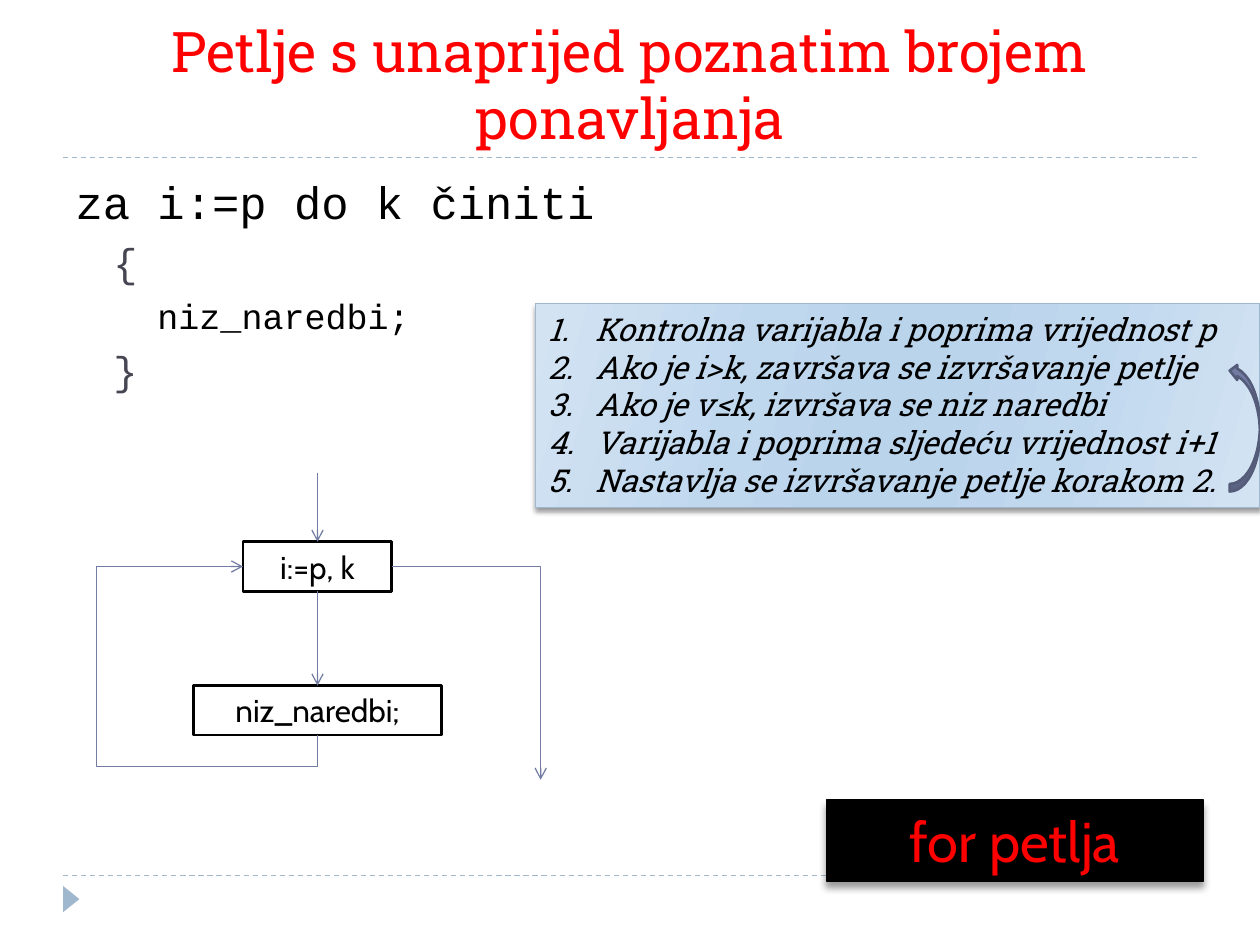
from lxml import etree
from pptx import Presentation
from pptx.dml.color import RGBColor
from pptx.enum.dml import MSO_LINE
from pptx.enum.shapes import MSO_CONNECTOR, MSO_SHAPE
from pptx.enum.text import MSO_ANCHOR, PP_ALIGN
from pptx.oxml.ns import qn
from pptx.util import Cm, Pt

STRAIGHT, ELBOW = MSO_CONNECTOR.STRAIGHT, MSO_CONNECTOR.ELBOW
RECT, TRIANGLE = MSO_SHAPE.RECTANGLE, MSO_SHAPE.ISOSCELES_TRIANGLE
CURVED_ARROW = MSO_SHAPE.CURVED_LEFT_ARROW
LEFT, CENTER = PP_ALIGN.LEFT, PP_ALIGN.CENTER
MIDDLE, BOTTOM, TOP = MSO_ANCHOR.MIDDLE, MSO_ANCHOR.BOTTOM, MSO_ANCHOR.TOP
DASH = MSO_LINE.DASH

BLACK = RGBColor(0x00, 0x00, 0x00)
WHITE = RGBColor(0xFF, 0xFF, 0xFF)
RED = RGBColor(0xFF, 0x00, 0x00)
GREY = RGBColor(0x46, 0x46, 0x53)
PALE = RGBColor(0x9F, 0xB8, 0xCD)
SLATE = RGBColor(0x72, 0x7C, 0xA3)
DARK_SLATE = RGBColor(0x54, 0x5C, 0x79)
GRADIENT = [(0, "D3E3F2"), (30, "C0D8EE"), (45, "BAD4EC"),
            (55, "BAD4EC"), (73, "C0D8EE"), (100, "D3E3F2")]


def add_text(p, text, font, size, color, align=LEFT):
    p.alignment = align
    r = p.add_run()
    r.text = text
    r.font.name, r.font.size, r.font.color.rgb = font, Pt(size), color
    return r


def style_line(cxn, color, dash=None):
    """Plain thin line; without a dash it ends in an open arrowhead."""
    cxn.line.color.rgb, cxn.line.width = color, Pt(0.75)
    if dash:
        cxn.line.dash_style = dash
    else:
        etree.SubElement(cxn.line._get_or_add_ln(), qn("a:tailEnd"), type="arrow")
    etree.SubElement(cxn._element.spPr, qn("a:effectLst"))


prs = Presentation()
prs.slide_width, prs.slide_height = Cm(25.4), Cm(19.05)
s = prs.slides.add_slide(prs.slide_layouts[1])

# Rules and corner mark
for y in (3.18, 17.65):
    rule = s.shapes.add_connector(STRAIGHT, Cm(1.27), Cm(y), Cm(24.13), Cm(y))
    style_line(rule, PALE, DASH)
mark = s.shapes.add_shape(TRIANGLE, Cm(1.17), Cm(17.96), Cm(0.53), Cm(0.33))
mark.rotation = 90
mark.shadow.inherit = False
mark.fill.solid()
mark.fill.fore_color.rgb = PALE
mark.line.fill.background()

# Title
title = s.shapes.title
title.left, title.top, title.width, title.height = Cm(1.27), Cm(0.43), Cm(22.86), Cm(2.74)
tf = title.text_frame
tf.vertical_anchor = BOTTOM
add_text(tf.paragraphs[0], "Petlje s unaprijed poznatim brojem ponavljanja",
         "Roboto Slab", 32, RED, CENTER)

# Pseudocode
body = s.placeholders[1]
body.left, body.top, body.width, body.height = Cm(1.27), Cm(3.38), Cm(16.84), Cm(5.33)
tf = body.text_frame
tf.vertical_anchor = TOP
CODE = [("za i:=p do k činiti", 0, 0, 6, 26, BLACK),
        ("{", 1, 0.76, 5, 23, GREY),
        ("niz_naredbi;", 2, 1.65, 5, 20, BLACK),
        ("}", 1, 0.76, 5, 23, GREY)]
for i, (text, level, indent, before, size, color) in enumerate(CODE):
    p = tf.add_paragraph() if i else tf.paragraphs[0]
    p.level, p.space_before = level, Pt(before)
    add_text(p, text, "Courier New", size, color)
    pPr = p._p.get_or_add_pPr()
    pPr.set("marL", str(Cm(indent)))
    pPr.set("indent", "0")
    etree.SubElement(pPr, qn("a:buNone"))

# Flowchart boxes, centred on one axis
AXIS = 6.4
boxes = []
for text, top, width in (("i:=p, k", 10.92, 3), ("niz_naredbi;", 13.82, 5)):
    sp = s.shapes.add_shape(RECT, Cm(AXIS - width / 2), Cm(top), Cm(width), Cm(1))
    sp.shadow.inherit = False
    sp.fill.solid()
    sp.fill.fore_color.rgb = WHITE
    sp.line.color.rgb, sp.line.width = BLACK, Pt(1.5)
    sp.text_frame.vertical_anchor = MIDDLE
    add_text(sp.text_frame.paragraphs[0], text, "Cabin", 18, BLACK, CENTER)
    boxes.append(sp)
header, statements = boxes

# Flowchart arrows
entry = s.shapes.add_connector(STRAIGHT, Cm(AXIS), Cm(9.53), Cm(AXIS), Cm(10.92))
entry.end_connect(header, 0)
step = s.shapes.add_connector(STRAIGHT, Cm(AXIS), Cm(11.92), Cm(AXIS), Cm(13.82))
step.begin_connect(header, 2)
step.end_connect(statements, 0)
leave = s.shapes.add_connector(ELBOW, Cm(7.9), Cm(11.42), Cm(10.9), Cm(15.72))
leave.begin_connect(header, 3)
back = s.shapes.add_connector(ELBOW, Cm(AXIS), Cm(14.82), Cm(4.9), Cm(11.42))
back.begin_connect(statements, 2)
back.end_connect(header, 1)
for cxn in (entry, step, leave, back):
    style_line(cxn, SLATE)

leave._element.spPr.find(qn("a:prstGeom")).set("prst", "bentConnector2")

# The way back leaves downwards, so its frame is turned a quarter
back.left, back.top, back.width, back.height = Cm(3.95), Cm(12.37), Cm(3.4), Cm(1.5)
xfrm = back._element.spPr.find(qn("a:xfrm"))
for flag, value in (("rot", "5400000"), ("flipH", "1"), ("flipV", "0")):
    xfrm.set(flag, value)
geom = back._element.spPr.find(qn("a:prstGeom"))
geom.set("prst", "bentConnector4")
guides = geom.find(qn("a:avLst"))
for name, value in (("adj1", -18700), ("adj2", 296500)):
    etree.SubElement(guides, qn("a:gd"), name=name, fmla=f"val {value}")

# Explanation panel and label
panel = s.shapes.add_shape(RECT, Cm(10.8), Cm(6.12), Cm(14.6), Cm(4.11))
label = s.shapes.add_shape(RECT, Cm(16.66), Cm(16.13), Cm(7.6), Cm(1.63))
for sp, color, blur, dist in ((panel, PALE, 3, 2), (label, BLACK, 4, 3.4)):
    sp.line.color.rgb, sp.line.width = color, Pt(0.75)
    sp.shadow.inherit = False
    effects = sp._element.spPr.find(qn("a:effectLst"))
    shadow = etree.SubElement(effects, qn("a:outerShdw"), blurRad=str(Pt(blur)),
                              dist=str(Pt(dist)), dir="5400000", rotWithShape="0")
    clr = etree.SubElement(shadow, qn("a:srgbClr"), val=str(BLACK))
    etree.SubElement(clr, qn("a:alpha"), val="40000")

panel.fill.gradient()
panel.fill.gradient_angle = 360 - 16
stops = panel._element.spPr.find(qn("a:gradFill")).find(qn("a:gsLst"))
for gs in list(stops):
    stops.remove(gs)
for pos, color in GRADIENT:
    gs = etree.SubElement(stops, qn("a:gs"), pos=str(pos * 1000))
    etree.SubElement(gs, qn("a:srgbClr"), val=color)

STEPS = ["Kontrolna varijabla i poprima vrijednost p",
         "Ako je i>k, završava se izvršavanje petlje",
         "Ako je v≤k, izvršava se niz naredbi",
         "Varijabla i poprima sljedeću vrijednost i+1",
         "Nastavlja se izvršavanje petlje korakom 2."]
tf = panel.text_frame
tf.vertical_anchor = TOP
for i, text in enumerate(STEPS):
    p = tf.add_paragraph() if i else tf.paragraphs[0]
    add_text(p, text, "Roboto Slab", 18, BLACK).font.italic = True
    pPr = p._p.get_or_add_pPr()
    pPr.set("marL", str(Cm(0.95)))
    pPr.set("indent", str(-Cm(0.95)))
    etree.SubElement(pPr, qn("a:buFont"), typeface="+mj-lt")
    etree.SubElement(pPr, qn("a:buAutoNum"), type="arabicPeriod")

label.fill.solid()
label.fill.fore_color.rgb = BLACK
label.text_frame.vertical_anchor = TOP
add_text(label.text_frame.paragraphs[0], "for petlja", "Cabin", 32, RED, CENTER)

# Repeat arrow from the last step to the second
repeat = s.shapes.add_shape(CURVED_ARROW, Cm(24.79), Cm(7.32), Cm(0.61), Cm(2.59))
repeat._element.spPr.find(qn("a:xfrm")).set("flipV", "1")
repeat.shadow.inherit = False
repeat.fill.solid()
repeat.fill.fore_color.rgb = SLATE
repeat.line.color.rgb, repeat.line.width = DARK_SLATE, Pt(1.5)

prs.save("out.pptx")
